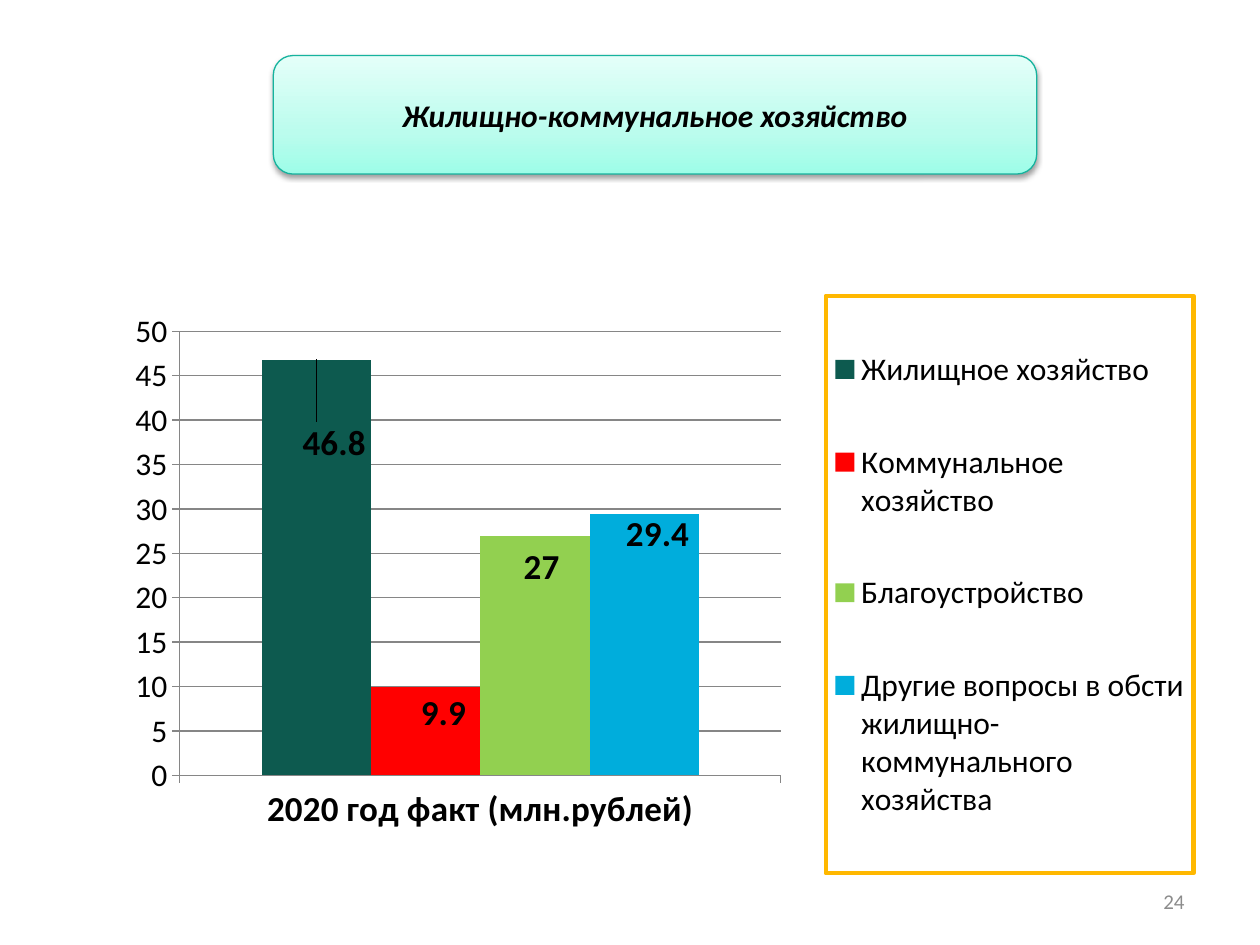
from copy import deepcopy

from lxml.etree import SubElement as Sub
from pptx import Presentation
from pptx.chart.data import CategoryChartData as Data
from pptx.dml.color import RGBColor as RGB
from pptx.enum.chart import XL_CHART_TYPE as Kind, XL_LEGEND_POSITION as Side
from pptx.enum.chart import XL_LABEL_POSITION as Spot, XL_TICK_MARK as Tick
from pptx.enum.shapes import MSO_SHAPE as Shape
from pptx.enum.text import MSO_ANCHOR as Anchor, PP_ALIGN as Align
from pptx.oxml import parse_xml
from pptx.oxml.ns import nsdecls, qn
from pptx.util import Cm, Pt

FONT = "Calibri"
BLACK = RGB(0, 0, 0)
GRAY = RGB(0x8C, 0x8C, 0x8C)
RULE = RGB(0x86, 0x86, 0x86)
TEAL = RGB(0x16, 0xB3, 0x9E)
GOLD = "FFB800"
MINTS = [
    (0, RGB(0x9D, 0xFD, 0xE8)),
    (0.35, RGB(0xBB, 0xFC, 0xED)),
    (1, RGB(0xE4, 0xFF, 0xF9)),
]
BARS = [
    ("Жилищное хозяйство", 46.8, RGB(0x0D, 0x5A, 0x4F), (0.016, 0.19)),
    ("Коммунальное хозяйство", 9.9, RGB(0xFF, 0, 0), (0.016, 0.09)),
    ("Благоустройство", 27, RGB(0x92, 0xD0, 0x50), (0.006, 0.1)),
    ("Другие вопросы в обсти жилищно-коммунального хозяйства", 29.4,
     RGB(0, 0xAD, 0xDC), (0.012, 0.08)),
]


def style(font, size, color=BLACK, bold=False, italic=False):
    font.name, font.size = FONT, Pt(size)
    font.color.rgb = color
    font.bold, font.italic = bold, italic


def write(shape, text, align):
    frame = shape.text_frame
    frame.word_wrap = True
    frame.vertical_anchor = Anchor.MIDDLE
    para = frame.paragraphs[0]
    para.text, para.alignment = text, align
    return para.font


def shade(fill, stops):
    fill.gradient()
    fill.gradient_angle = 90
    first = fill.gradient_stops[0]._gs
    for _ in range(len(stops) - len(fill.gradient_stops)):
        first.addnext(deepcopy(first))
    for stop, (pos, color) in zip(fill.gradient_stops, stops):
        stop.position, stop.color.rgb = pos, color


def add_title(slide):
    box = slide.shapes.add_shape(
        Shape.ROUNDED_RECTANGLE, Cm(5.51), Cm(1.12), Cm(15.39), Cm(2.39))
    shade(box.fill, MINTS)
    box.line.color.rgb, box.line.width = TEAL, Pt(0.75)
    box.shadow.inherit = False
    glow = box._element.spPr.find(qn("a:effectLst"))
    glow.append(parse_xml(
        f'<a:outerShdw {nsdecls("a")} blurRad="{Pt(3.1)}" dist="{Pt(1.6)}" '
        'dir="5400000" rotWithShape="0"><a:srgbClr val="000000">'
        '<a:alpha val="38000"/></a:srgbClr></a:outerShdw>'))
    style(write(box, "Жилищно-коммунальное хозяйство", Align.CENTER),
          18, bold=True, italic=True)


def add_page(slide):
    box = slide.shapes.add_textbox(Cm(18.21), Cm(17.65), Cm(5.92), Cm(1.02))
    style(write(box, "24", Align.RIGHT), 12, GRAY)


def layout(modes, **sizes):
    node = parse_xml(f'<c:layout {nsdecls("c")}><c:manualLayout/></c:layout>')
    for name, val in [*modes.items(), *sizes.items()]:
        Sub(node[0], qn(f"c:{name}")).set("val", str(val))
    return node


def place(chart):
    edge = {"xMode": "edge", "yMode": "edge"}
    area = chart._chartSpace.chart.plotArea
    for old in area.findall(qn("c:layout")):
        area.remove(old)
    area.insert(0, layout({"layoutTarget": "inner", **edge},
                          x=0.093, y=0.064, w=0.536, h=0.764))
    chart.has_legend = True
    legend = chart.legend
    legend.position, legend.include_in_layout = Side.RIGHT, False
    style(legend.font, 18)
    root = legend._element
    for old in root.findall(qn("c:layout")):
        root.remove(old)
    root.find(qn("c:legendPos")).addnext(
        layout(edge, x=0.669, y=0.003, w=0.328, h=0.993))
    root.find(qn("c:txPr")).addprevious(parse_xml(
        f'<c:spPr {nsdecls("c", "a")}><a:ln w="{Pt(2.5)}"><a:solidFill>'
        f'<a:srgbClr val="{GOLD}"/></a:solidFill></a:ln></c:spPr>'))


def paint(series, color, shift):
    series.format.fill.solid()
    series.format.fill.fore_color.rgb = color
    series.invert_if_negative = False
    labels = series.data_labels
    labels.show_value = True
    style(labels.font, 20, bold=True)
    label = series.points[0].data_label
    style(label.font, 20, bold=True)
    label.position = Spot.OUTSIDE_END
    node = series._element.xpath("c:dLbls/c:dLbl")[0]
    node.insert(1, layout({}, x=shift[0], y=shift[1]))


def add_bars(slide):
    data = Data()
    data.categories = ["2020 год факт (млн.рублей)"]
    for name, val, _, _ in BARS:
        data.add_series(name, [val])
    chart = slide.shapes.add_chart(
        Kind.COLUMN_CLUSTERED, Cm(1.52), Cm(5.92), Cm(22.61), Cm(11.73),
        data).chart
    chart.has_title = False
    style(chart.font, 18)
    plot = chart.plots[0]
    plot.gap_width, plot.overlap, plot.vary_by_categories = 150, 0, False
    for series, (_, _, color, shift) in zip(plot.series, BARS):
        paint(series, color, shift)
    cat, val = chart.category_axis, chart.value_axis
    style(cat.tick_labels.font, 20, bold=True)
    style(val.tick_labels.font, 18)
    val.minimum_scale, val.maximum_scale, val.major_unit = 0, 50, 5
    val.has_major_gridlines = True
    val.major_gridlines.format.line.color.rgb = RULE
    for axis in (cat, val):
        axis.major_tick_mark = Tick.OUTSIDE
        axis.format.line.color.rgb = RULE
    place(chart)


def main():
    deck = Presentation()
    deck.slide_width, deck.slide_height = Cm(25.4), Cm(19.05)
    slide = deck.slides.add_slide(deck.slide_layouts[6])
    add_page(slide)
    add_title(slide)
    add_bars(slide)
    deck.save("out.pptx")


if __name__ == "__main__":
    main()
